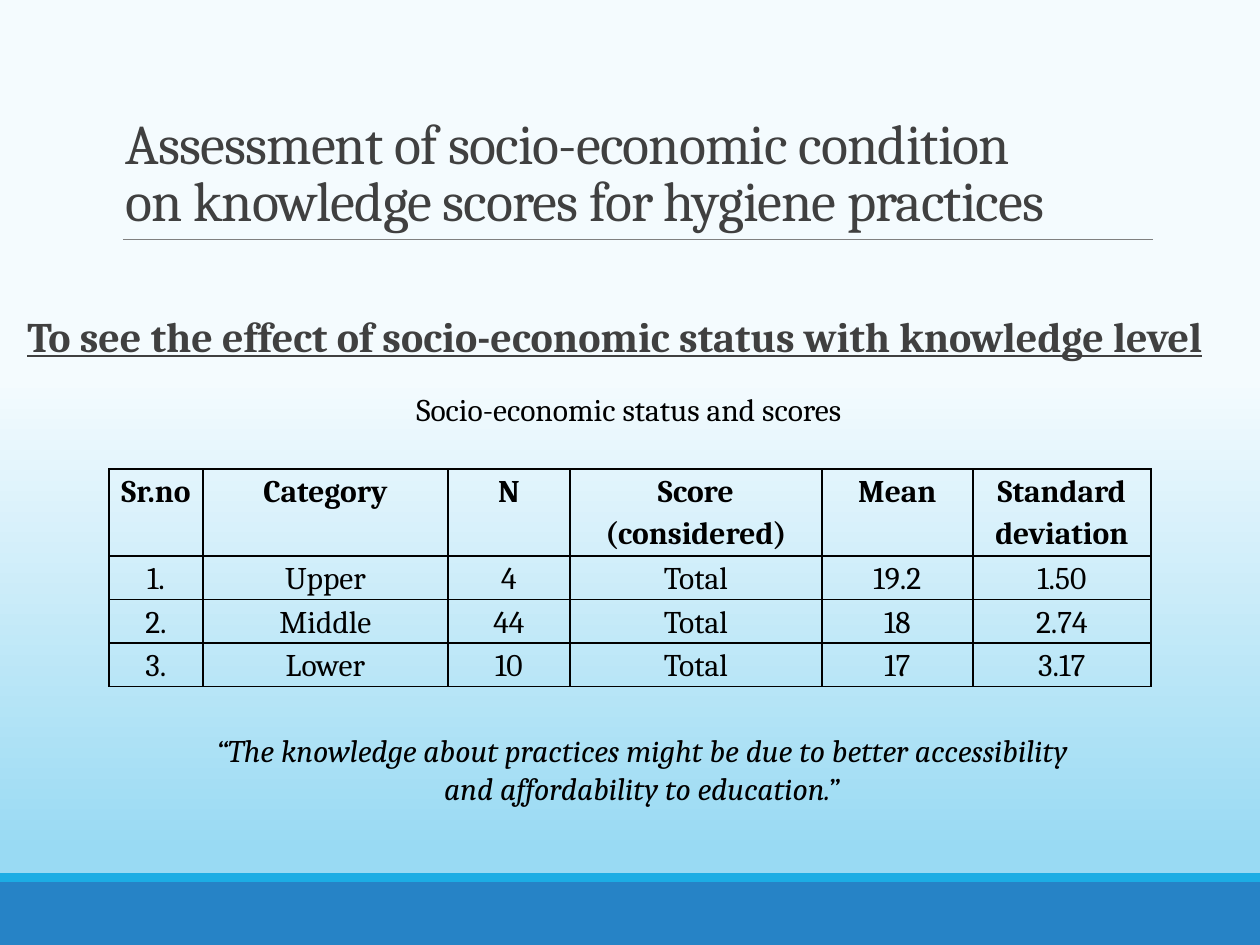
from lxml import etree
from pptx import Presentation
from pptx.dml.color import RGBColor
from pptx.enum import shapes, text
from pptx.oxml.ns import qn
from pptx import util as u

# Content
TITLE = "Assessment of socio-economic condition\von knowledge scores for hygiene practices"
AIM = "To see the effect of socio-economic status with knowledge level"
CAPTION = "Socio-economic status and scores"
REMARK = ("“The knowledge about practices might be due to better accessibility "
          "and affordability to education.”")
SCORES = [
    ("Sr.no", "Category", "N", "Score\n(considered)", "Mean", "Standard deviation"),
    ("1.", "Upper", "4", "Total", "19.2", "1.50"),
    ("2.", "Middle", "44", "Total", "18", "2.74"),
    ("3.", "Lower", "10", "Total", "17", "3.17"),
]
COLUMN_WIDTHS = (94, 245, 122, 252, 151, 178)
ROW_HEIGHTS = (87, 43, 43, 43)

# Look
FONT = "Cambria"
BLACK = RGBColor(0x00, 0x00, 0x00)
DARK = RGBColor(0x40, 0x40, 0x40)
GREY = RGBColor(0x80, 0x80, 0x80)
BLUE = RGBColor(0x26, 0x83, 0xC6)
CYAN = RGBColor(0x1C, 0xAD, 0xE4)
SKY_STOPS = [(40, RGBColor(0xF4, 0xFB, 0xFE)), (90, RGBColor(0x99, 0xDA, 0xF3)),
             (100, RGBColor(0x99, 0xDA, 0xF3))]
WIDTH, HEIGHT = 1260, 945
CENTER, LEFT = text.PP_ALIGN.CENTER, text.PP_ALIGN.LEFT


def px(n):
    return u.Emu(round(n * 914400 / 126))


def style(frame, size, color=BLACK, align=LEFT, spacing=None, **flags):
    for paragraph in frame.paragraphs:
        paragraph.alignment = align
        paragraph.line_spacing = spacing
        font = paragraph.font
        font.name, font.size, font.color.rgb = FONT, u.Pt(size), color
        for flag, value in flags.items():
            setattr(font, flag, value)


def add_text(slide, words, box, size, wrap=True, **look):
    frame = slide.shapes.add_textbox(*map(px, box)).text_frame
    frame.word_wrap = wrap
    frame.auto_size = text.MSO_AUTO_SIZE.SHAPE_TO_FIT_TEXT
    frame.text = words
    style(frame, size, **look)


def add_color(parent, color):
    etree.SubElement(parent, qn("a:srgbClr"), val=str(color))


def add_borders(cell):
    properties = cell._tc.get_or_add_tcPr()
    for position, side in enumerate(("lnL", "lnR", "lnT", "lnB")):
        line = etree.Element(qn(f"a:{side}"), w=str(u.Pt(1)))
        add_color(etree.SubElement(line, qn("a:solidFill")), BLACK)
        properties.insert(position, line)


def add_background(slide):
    fill = slide.background.fill
    fill.gradient()
    fill.gradient_angle = 270
    stops = slide.element.find(".//" + qn("a:gsLst"))
    for stop in list(stops):
        stops.remove(stop)
    for percent, color in SKY_STOPS:
        add_color(etree.SubElement(stops, qn("a:gs"), pos=str(percent * 1000)), color)


def add_scores(slide):
    frame = slide.shapes.add_table(len(SCORES), len(COLUMN_WIDTHS), px(109), px(469),
                                   px(sum(COLUMN_WIDTHS)), px(sum(ROW_HEIGHTS)))
    table = frame.table
    for column, width in zip(table.columns, COLUMN_WIDTHS):
        column.width = px(width)
    for r, (values, height) in enumerate(zip(SCORES, ROW_HEIGHTS)):
        table.rows[r].height = px(height)
        for c, value in enumerate(values):
            cell = table.cell(r, c)
            cell.text = value
            cell.margin_left = cell.margin_right = px(9)
            cell.margin_top = cell.margin_bottom = 0
            cell.fill.background()
            add_borders(cell)
            style(cell.text_frame, 18, align=CENTER, spacing=1.15, bold=r == 0)


def main():
    deck = Presentation()
    deck.slide_width, deck.slide_height = px(WIDTH), px(HEIGHT)
    slide = deck.slides.add_slide(deck.slide_layouts[5])
    add_background(slide)

    # Bands along the foot
    for top, height, color in ((882, 63, BLUE), (873, 9, CYAN)):
        band = slide.shapes.add_shape(shapes.MSO_SHAPE.RECTANGLE, 0, px(top),
                                      px(WIDTH), px(height))
        band.shadow.inherit = False
        band.fill.solid()
        band.fill.fore_color.rgb = color
        band.line.fill.background()

    # Title and the rule below it
    rule = slide.shapes.add_connector(shapes.MSO_CONNECTOR.STRAIGHT,
                                      px(123), px(239), px(1153), px(239))
    rule.line.color.rgb, rule.line.width = GREY, u.Pt(0.5)
    etree.SubElement(rule._element.spPr, qn("a:effectLst"))

    title = slide.shapes.title
    title.left, title.top, title.width, title.height = map(px, (113, 39, 1040, 200))
    heading = title.text_frame
    heading.text = TITLE
    heading.word_wrap = True
    heading.auto_size = text.MSO_AUTO_SIZE.NONE
    heading.vertical_anchor = text.MSO_ANCHOR.BOTTOM
    style(heading, 32, DARK, spacing=0.85)
    for run in heading.paragraphs[0].runs:
        run.font._element.set("spc", "-50")

    # Aim, remark, table and its caption
    add_text(slide, AIM, (15, 304, 1235, 63), 24, color=DARK, bold=True, underline=True)
    add_text(slide, REMARK, (176, 725, 932, 89), 18, align=CENTER, italic=True)
    add_scores(slide)
    add_text(slide, CAPTION, (404, 384, 479, 50), 18, wrap=False)

    deck.save("out.pptx")


if __name__ == "__main__":
    main()
